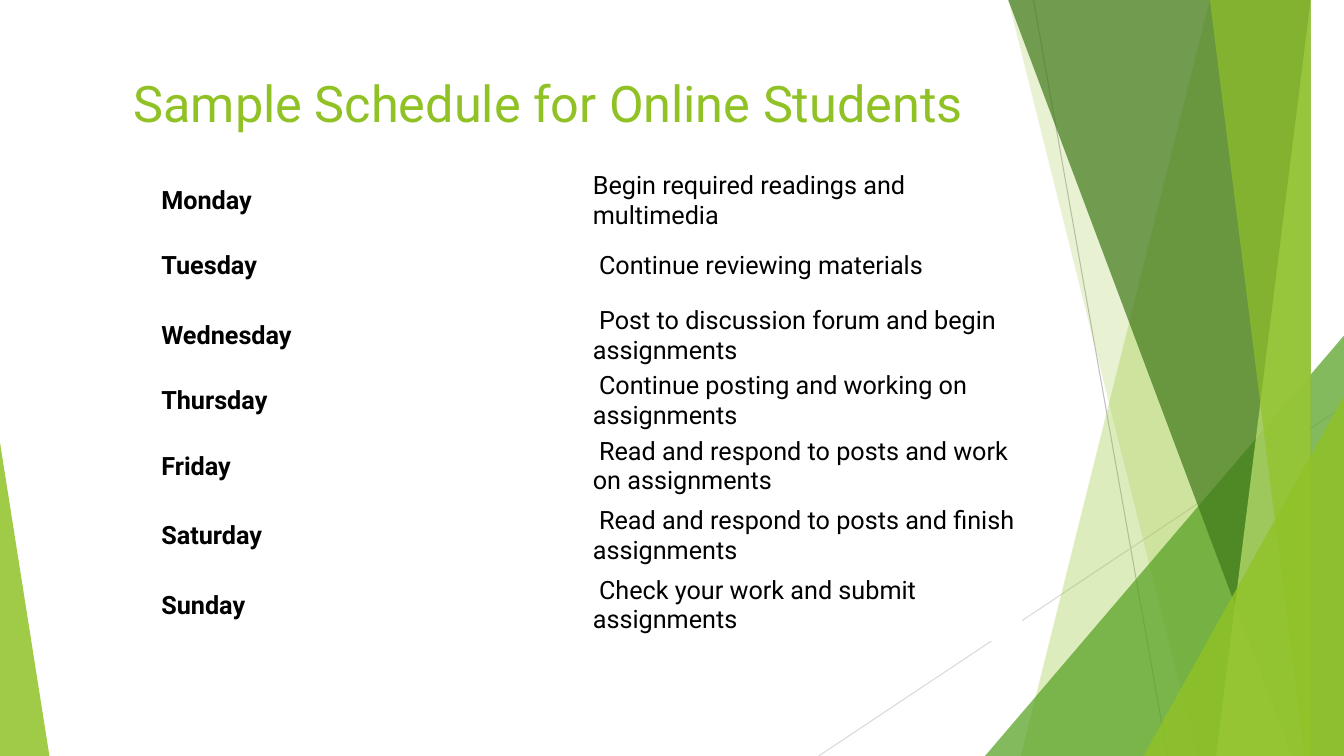
from lxml import etree
from pptx import Presentation
from pptx import util as u
from pptx.dml.color import RGBColor
from pptx.enum import shapes, text
from pptx.oxml.ns import qn

W, H = 13.33, 7.5
FONT = "Roboto"
GREEN = "90C226"

TITLE = "Sample Schedule for Online Students"
SCHEDULE = [  # day, task, row height
    ("Monday", "Begin required readings and multimedia", 0.46),
    ("Tuesday", " Continue reviewing materials", 0.69),
    ("Wednesday", " Post to discussion forum and begin assignments", 0.69),
    ("Thursday", " Continue posting and working on assignments", 0.6),
    ("Friday", " Read and respond to posts and work on assignments", 0.69),
    ("Saturday", " Read and respond to posts and finish assignments", 0.69),
    ("Sunday", " Check your work and submit assignments", 0.69),
]
TABLE_LEFT, TABLE_TOP, COL_W = 1.57, 1.69, 4.28

RAYS = [  # start, end, colour
    ((10.25, 0), (11.58, H), "BFBFBF"),
    ((W, 4.03), (8.12, H), "D9D9D9"),
]
# Bands reach the right edge: ("band", left at top, left at bottom, colour, opacity)
# Corners stand on the bottom edge: ("corner", left, width, height, apex, colour, opacity)
FACETS = [
    ("band", 12.28, 10.04, GREEN, 30),
    ("band", 10.5, 11.83, GREEN, 20),
    ("corner", 9.77, 3.56, 4.17, 1, "54A021", 72),
    ("band", 10.21, 12.91, "3F7819", 70),
    ("band", 13.03, 11.92, "C0E474", 70),
    ("band", 11.96, 13.18, GREEN, 65),
    ("corner", 11.34, 1.99, 3.57, 1, GREEN, 80),
    ("corner", 0, 0.49, 3.11, 0, GREEN, 85),
]


def rgb(value):
    return RGBColor.from_string(value)


def write(tf, words, size=18, color="000000", bold=False, align=text.PP_ALIGN.LEFT):
    tf.word_wrap = True
    p = tf.paragraphs[0]
    p.alignment = align
    r = p.add_run()
    r.text = words
    r.font.name, r.font.size, r.font.bold = FONT, u.Pt(size), bold
    r.font.color.rgb = rgb(color)


def paint(sp, color, opacity):
    sp.shadow.inherit = False
    sp.line.fill.background()
    sp.fill.solid()
    sp.fill.fore_color.rgb = rgb(color)
    clr = sp.fill._xPr.find(qn("a:solidFill"))[0]
    etree.SubElement(clr, qn("a:alpha")).set("val", str(opacity * 1000))


def add_ray(s, start, end, color):
    ends = [u.Inches(v) for v in (*start, *end)]
    line = s.shapes.add_connector(shapes.MSO_CONNECTOR.STRAIGHT, *ends)
    line.line.color.rgb = rgb(color)
    line.line.width = u.Pt(0.75)
    etree.SubElement(line._element.spPr, qn("a:effectLst"))


def add_band(s, top_x, bottom_x, color, opacity):
    builder = s.shapes.build_freeform(top_x, -0.01, scale=u.Inches(1))
    builder.add_line_segments([(W, -0.01), (W, H), (bottom_x, H)], close=True)
    paint(builder.convert_to_shape(), color, opacity)


def add_corner(s, left, width, height, apex, color, opacity):
    box = [u.Inches(v) for v in (left, H - height, width, height)]
    sp = s.shapes.add_shape(shapes.MSO_SHAPE.ISOSCELES_TRIANGLE, *box)
    sp.adjustments[0] = apex
    paint(sp, color, opacity)


def add_schedule(s):
    box = (TABLE_LEFT, TABLE_TOP, 2 * COL_W, sum(row[2] for row in SCHEDULE))
    table = s.shapes.add_table(len(SCHEDULE), 2, *[u.Inches(v) for v in box]).table
    table.first_row = table.horz_banding = False
    for i, (day, task, height) in enumerate(SCHEDULE):
        table.rows[i].height = u.Inches(height)
        for j, words in enumerate((day, task)):
            cell = table.cell(i, j)
            cell.fill.solid()
            cell.fill.fore_color.rgb = rgb("FFFFFF")
            cell.vertical_anchor = text.MSO_ANCHOR.MIDDLE
            cell.margin_left = cell.margin_right = u.Inches(0.03)
            cell.margin_top = cell.margin_bottom = u.Inches(0.01)
            write(cell.text_frame, words, bold=j == 0)


def main():
    prs = Presentation()
    prs.slide_width, prs.slide_height = u.Inches(W), u.Inches(H)
    s = prs.slides.add_slide(prs.slide_layouts[5])

    # Background facets
    for ray in RAYS:
        add_ray(s, *ray)
    draw = {"band": add_band, "corner": add_corner}
    for kind, *spec_values in FACETS:
        draw[kind](s, *spec_values)

    # Title
    title = s.shapes.title
    title.left, title.top = u.Inches(0.74), u.Inches(0.67)
    title.width, title.height = u.Inches(9.4), u.Inches(1.44)
    title.text_frame.vertical_anchor = text.MSO_ANCHOR.TOP
    write(title.text_frame, TITLE, size=36, color=GREEN, align=text.PP_ALIGN.CENTER)

    # Weekly schedule
    add_schedule(s)
    prs.save("out.pptx")


if __name__ == "__main__":
    main()
